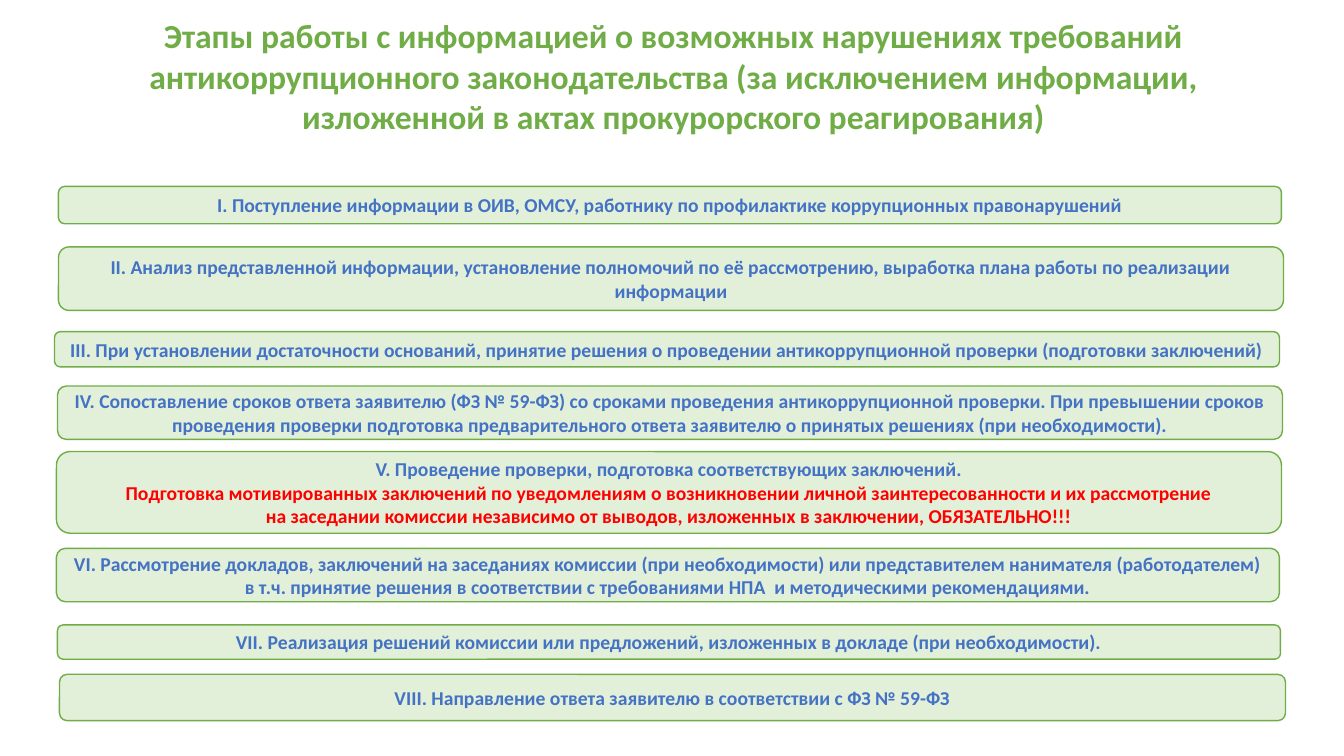
from pptx import Presentation
from pptx.dml.color import RGBColor
from pptx.enum import shapes, text
from pptx.util import Inches, Pt

COLORS = {"green": "70AD47", "pale_green": "E2F0D9", "blue": "4472C4", "red": "FF0000"}
TITLE = (
    "Этапы работы с информацией о возможных нарушениях требований "
    "антикоррупционного законодательства (за исключением информации, "
    "изложенной в актах прокурорского реагирования)"
)

# Each stage: left, top, width, height, then paragraphs as (color, lines)
STAGES = [
    (0.58, 1.85, 12.13, 0.37, [("blue", [
        "I. Поступление информации в ОИВ, ОМСУ, работнику по профилактике "
        "коррупционных правонарушений"])]),
    (0.58, 2.45, 12.15, 0.63, [("blue", [
        "II. Анализ представленной информации, установление полномочий по её "
        "рассмотрению, выработка плана работы по реализации информации"])]),
    (0.54, 3.29, 12.15, 0.35, [("blue", [
        "III. При установлении достаточности оснований, принятие решения о "
        "проведении антикоррупционной проверки (подготовки заключений)"])]),
    (0.57, 3.83, 12.15, 0.53, [("blue", [
        "IV. Сопоставление сроков ответа заявителю (ФЗ № 59-ФЗ) со сроками "
        "проведения антикоррупционной проверки. При превышении сроков проведения "
        "проверки подготовка предварительного ответа заявителю о принятых "
        "решениях (при необходимости)."])]),
    (0.56, 4.48, 12.15, 0.81, [
        ("blue", ["V. Проведение проверки, подготовка соответствующих заключений."]),
        ("red", [
            "Подготовка мотивированных заключений по уведомлениям о возникновении "
            "личной заинтересованности и их рассмотрение",
            "на заседании комиссии независимо от выводов, изложенных в заключении, "
            "ОБЯЗАТЕЛЬНО!!!"])]),
    (0.56, 5.44, 12.13, 0.53, [
        ("blue", [
            "VI. Рассмотрение докладов, заключений на заседаниях комиссии (при "
            "необходимости) или представителем нанимателя (работодателем)"]),
        ("blue", [
            "в т.ч. принятие решения в соответствии с требованиями НПА  и "
            "методическими рекомендациями."])]),
    (0.57, 6.2, 12.13, 0.34, [("blue", [
        "VII. Реализация решений комиссии или предложений, изложенных в докладе "
        "(при необходимости)."])]),
    (0.59, 6.69, 12.16, 0.46, [("blue", [
        "VIII. Направление ответа заявителю в соответствии с ФЗ № 59-ФЗ"])]),
]


def rgb(name):
    return RGBColor.from_string(COLORS[name])


def add_bold_run(paragraph, wording, size, color):
    paragraph.alignment = text.PP_ALIGN.CENTER
    run = paragraph.add_run()
    run.text = wording
    run.font.name = "Calibri"
    run.font.size = Pt(size)
    run.font.bold = True
    run.font.color.rgb = rgb(color)


presentation = Presentation()
presentation.slide_width = Inches(13.33)
presentation.slide_height = Inches(7.5)
slide = presentation.slides.add_slide(presentation.slide_layouts[5])

title = slide.shapes.title
title.left, title.top = Inches(0.63), Inches(0.1)
title.width, title.height = Inches(12.1), Inches(1.31)
title.text_frame.auto_size = text.MSO_AUTO_SIZE.NONE
title.text_frame.vertical_anchor = text.MSO_ANCHOR.TOP
add_bold_run(title.text_frame.paragraphs[0], TITLE, 24, "green")

for left, top, width, height, paragraphs in STAGES:
    stage = slide.shapes.add_shape(
        shapes.MSO_SHAPE.ROUNDED_RECTANGLE,
        Inches(left), Inches(top), Inches(width), Inches(height))
    stage.shadow.inherit = False
    stage.fill.solid()
    stage.fill.fore_color.rgb = rgb("pale_green")
    stage.line.color.rgb = rgb("green")
    stage.line.width = Pt(1)
    frame = stage.text_frame
    frame.word_wrap = True
    frame.vertical_anchor = text.MSO_ANCHOR.MIDDLE
    for index, (color, lines) in enumerate(paragraphs):
        paragraph = frame.add_paragraph() if index else frame.paragraphs[0]
        for number, line in enumerate(lines):
            if number:
                paragraph.add_line_break()
            add_bold_run(paragraph, line, 14, color)

presentation.save("out.pptx")
